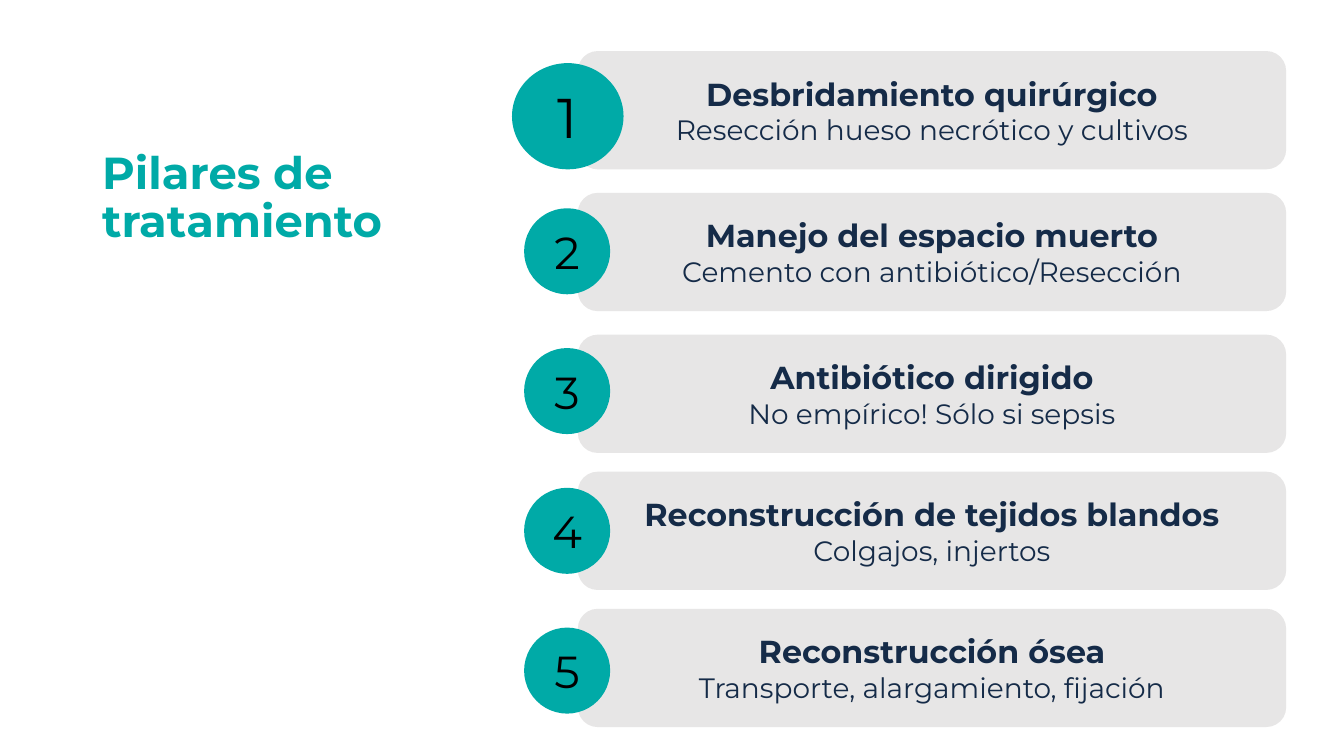
from pptx import Presentation
from pptx.dml.color import RGBColor
from pptx.enum.shapes import MSO_SHAPE as Shape
from pptx.enum.text import MSO_ANCHOR as Anchor, MSO_AUTO_SIZE as AutoSize, PP_ALIGN as Align
from pptx.util import Inches, Pt

# The slide is a 16:9 grid of square cells, 1000 columns wide.
COLUMNS, ROWS = 1000, 562.5
CELL = Inches(0.01)
FONT = "Montserrat"
TEAL, NAVY, GREY, BLACK = "00AAA7", "152B48", "E7E6E6", "000000"

PILLARS = [
    ("Desbridamiento quirúrgico", "Resección hueso necrótico y cultivos"),
    ("Manejo del espacio muerto", "Cemento con antibiótico/Resección"),
    ("Antibiótico dirigido", "No empírico! Sólo si sepsis"),
    ("Reconstrucción de tejidos blandos", "Colgajos, injertos"),
    ("Reconstrucción ósea", "Transporte, alargamiento, fijación"),
]


def color(value):
    return RGBColor.from_string(value)


def grid(*cells):
    return [int(cell * CELL) for cell in cells]


def write(para, text, size, ink, bold=False, align=Align.CENTER):
    para.alignment = align
    span = para.add_run()
    span.text = text
    font = span.font
    font.name, font.size, font.bold = FONT, Pt(size), bold
    font.color.rgb = color(ink)


def set_frame(frame, anchor, side, edge):
    frame.word_wrap = True
    frame.auto_size = AutoSize.NONE
    frame.vertical_anchor = anchor
    frame.margin_left = frame.margin_right = Inches(side)
    frame.margin_top = frame.margin_bottom = Inches(edge)


def add_filled(page, kind, box, fill):
    shape = page.shapes.add_shape(kind, *grid(*box))
    shape.shadow.inherit = False
    shape.fill.solid()
    shape.fill.fore_color.rgb = color(fill)
    shape.line.fill.background()
    set_frame(shape.text_frame, Anchor.MIDDLE, 0.1, 0.1)
    return shape


def place_title(page, box):
    title = page.shapes.title
    title.left, title.top, title.width, title.height = grid(*box)
    frame = title.text_frame
    set_frame(frame, Anchor.BOTTOM, 0.07, 0.04)
    para = frame.paragraphs[0]
    para.line_spacing = 0.9
    write(para, "Pilares de tratamiento", 24, TEAL, bold=True, align=Align.LEFT)


def add_bar(page, box, heading, detail):
    bar = add_filled(page, Shape.ROUNDED_RECTANGLE, box, GREY)
    bar.adjustments[0] = 0.167
    frame = bar.text_frame
    write(frame.paragraphs[0], heading, 17, NAVY, bold=True)
    write(frame.add_paragraph(), detail, 15, NAVY)


def add_badge(page, box, number, size):
    badge = add_filled(page, Shape.OVAL, box, TEAL)
    write(badge.text_frame.paragraphs[0], str(number), size, BLACK)


def add_pillars(page, box):
    """Stack the bars, then the numbered badges over their left ends."""
    left, top, width, height = box
    indent, bar_height = 49, 88
    wide_step, tight_step = 105.5, 102  # the last two bars sit closer
    for index, (heading, detail) in enumerate(PILLARS):
        tight = max(index - 2, 0)
        offset = (index - tight) * wide_step + tight * tight_step
        add_bar(page, (left + indent, top + offset, width - indent, bar_height),
                heading, detail)

    add_badge(page, (left, top + 9, 83, 79), 1, 30)
    diameter, badge_step = 64, 104
    last_top = top + height - diameter - 10
    for number in range(2, len(PILLARS) + 1):
        badge_top = last_top - (len(PILLARS) - number) * badge_step
        add_badge(page, (left + 9, badge_top, diameter, diameter), number, 24)


def main():
    deck = Presentation()
    deck.slide_width, deck.slide_height = grid(COLUMNS, ROWS)
    page = deck.slides.add_slide(deck.slide_layouts[5])
    place_title(page, (69, 38, 323, 150))
    add_pillars(page, (381, 38, 576, 503))
    deck.save("out.pptx")


if __name__ == "__main__":
    main()
